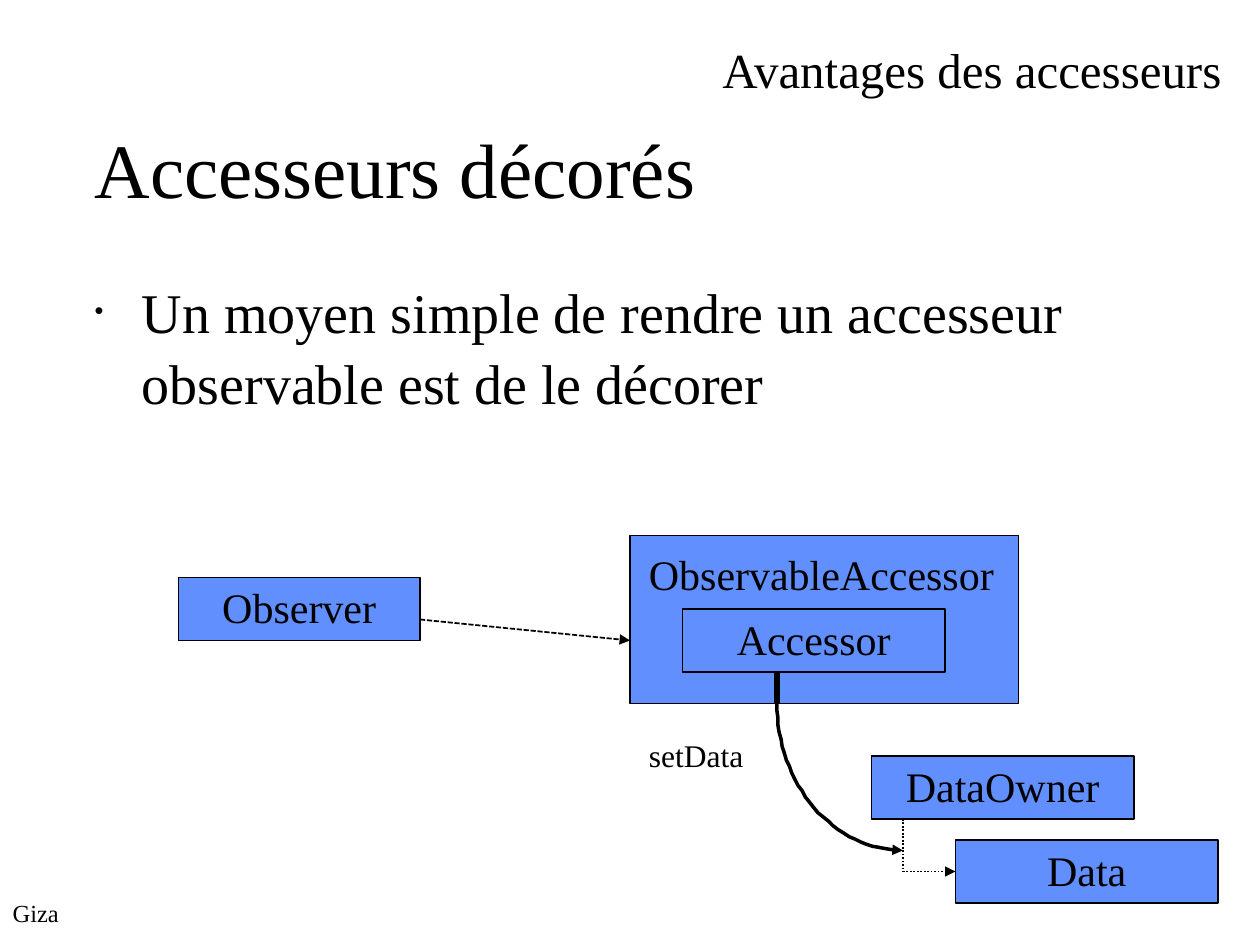
import math

import pptx
import pptx.dml.color
import pptx.enum.dml
import pptx.enum.shapes
import pptx.enum.text
import pptx.oxml
import pptx.oxml.ns
import pptx.util

PX = 7620  # EMU in one px, 120 px to the inch
FONT = "Times New Roman"
COLORS = {"ink": "000000", "box": "618FFD"}
ALIGN = pptx.enum.text.PP_ALIGN
ANCHOR = pptx.enum.text.MSO_ANCHOR
DASH = pptx.enum.dml.MSO_LINE
A_NS = pptx.oxml.ns.nsdecls("a")


def px(*lengths):
    return [pptx.util.Emu(length * PX) for length in lengths]


def color(name):
    return pptx.dml.color.RGBColor.from_string(COLORS[name])


def write(shape, words, size, align=ALIGN.LEFT, wrap=False, anchor=ANCHOR.TOP, top=4):
    frame = shape.text_frame
    frame_format = {
        "word_wrap": wrap,
        "auto_size": pptx.enum.text.MSO_AUTO_SIZE.NONE,
        "vertical_anchor": anchor,
        "margin_left": 0,
        "margin_right": 0,
        "margin_top": px(top)[0],
        "margin_bottom": 0,
    }
    for key, value in frame_format.items():
        setattr(frame, key, value)
    frame.text = words
    paragraph = frame.paragraphs[0]
    paragraph.alignment = align
    font = paragraph.runs[0].font
    for key, value in {"name": FONT, "size": pptx.util.Pt(size)}.items():
        setattr(font, key, value)
    font.color.rgb = color("ink")
    return paragraph


def place(shape, box):
    for key, value in zip(("left", "top", "width", "height"), px(*box)):
        setattr(shape, key, value)


def label(slide, box, words, size):
    write(slide.shapes.add_textbox(*px(*box)), words, size)


def stroke(shape, width, dash=None, arrow=False):
    shape.line.color.rgb = color("ink")
    shape.line.width = pptx.util.Pt(width)
    if dash:
        shape.line.dash_style = dash
    if arrow:
        tail = pptx.oxml.parse_xml(f'<a:tailEnd {A_NS} type="triangle"/>')
        shape.line._get_or_add_ln().append(tail)


def class_box(slide, box, name=None):
    shape = slide.shapes.add_shape(
        pptx.enum.shapes.MSO_SHAPE.RECTANGLE, *px(*box))
    shape.shadow.inherit = False
    shape.fill.solid()
    shape.fill.fore_color.rgb = color("box")
    stroke(shape, 1)
    if name:
        write(shape, name, 24, ALIGN.CENTER)


def link(slide, start, end, width=1, dash=None, arrow=False):
    connector = slide.shapes.add_connector(
        pptx.enum.shapes.MSO_CONNECTOR.STRAIGHT, *px(*start, *end))
    stroke(connector, width, dash, arrow)
    connector._element.spPr.append(
        pptx.oxml.parse_xml(f"<a:effectLst {A_NS}/>"))


def call_curve(slide, start, end, steps=32):
    """Quarter ellipse that leaves start downwards and reaches end sideways."""
    width, height = end[0] - start[0], end[1] - start[1]
    angles = [math.pi / 2 * step / steps for step in range(1, steps + 1)]
    points = [(end[0] - width * math.cos(angle), start[1] + height * math.sin(angle))
              for angle in angles]
    builder = slide.shapes.build_freeform(*start, scale=PX)
    builder.add_line_segments(points, close=False)
    curve = builder.convert_to_shape()
    curve.shadow.inherit = False
    curve.fill.background()
    stroke(curve, 2, arrow=True)


def heading(slide, box):
    title = slide.shapes.title
    place(title, box)
    write(title, "Accesseurs décorés", 44, wrap=True, anchor=ANCHOR.MIDDLE, top=0)


def bullet_list(slide, box):
    body = slide.placeholders[1]
    place(body, box)
    paragraph = write(
        body, "Un moyen simple de rendre un accesseur observable est de le décorer",
        32, wrap=True, top=0)
    paragraph.space_before = pptx.util.Pt(4.8)
    paragraph.line_spacing = 1.06
    properties = paragraph._p.get_or_add_pPr()
    indent = 45 * PX
    properties.set("marL", str(indent))
    properties.set("indent", str(-indent))
    for bullet in (f'<a:buClr {A_NS}><a:srgbClr val="{COLORS["ink"]}"/></a:buClr>',
                   f'<a:buSzPct {A_NS} val="45000"/>',
                   f'<a:buChar {A_NS} char="•"/>'):
        properties.append(pptx.oxml.parse_xml(bullet))


def accessor_diagram(slide, left, top):
    def at(x, y, *size):
        return (left + x, top + y, *size)

    class_box(slide, at(430, 0, 370, 160))
    label(slide, at(448, 8, 353, 60), "ObservableAccessor", 24)
    for name, x, y, width in (("Observer", 0, 40, 230),
                              ("Accessor", 480, 70, 250),
                              ("DataOwner", 660, 210, 250),
                              ("Data", 740, 290, 250)):
        class_box(slide, at(x, y, width, 60), name)
    label(slide, at(448, 187, 114, 48), "setData", 18)

    link(slide, at(230, 80), at(430, 100), dash=DASH.SQUARE_DOT, arrow=True)
    link(slide, at(690, 270), at(690, 320), dash=DASH.ROUND_DOT)
    link(slide, at(690, 320), at(740, 320), dash=DASH.ROUND_DOT, arrow=True)
    link(slide, at(570, 160), at(570, 130), width=3)
    call_curve(slide, at(570, 160), at(690, 300))


def main():
    deck = pptx.Presentation()
    deck.slide_width, deck.slide_height = px(1200, 900)
    slide = deck.slides.add_slide(deck.slide_layouts[1])
    label(slide, (12, 851, 68, 40), "Giza", 14)
    heading(slide, (90, 110, 1020, 100))
    bullet_list(slide, (90, 260, 1020, 540))
    label(slide, (688, 34, 504, 68), "Avantages des accesseurs", 28)
    accessor_diagram(slide, 170, 510)
    deck.save("out.pptx")


if __name__ == "__main__":
    main()
